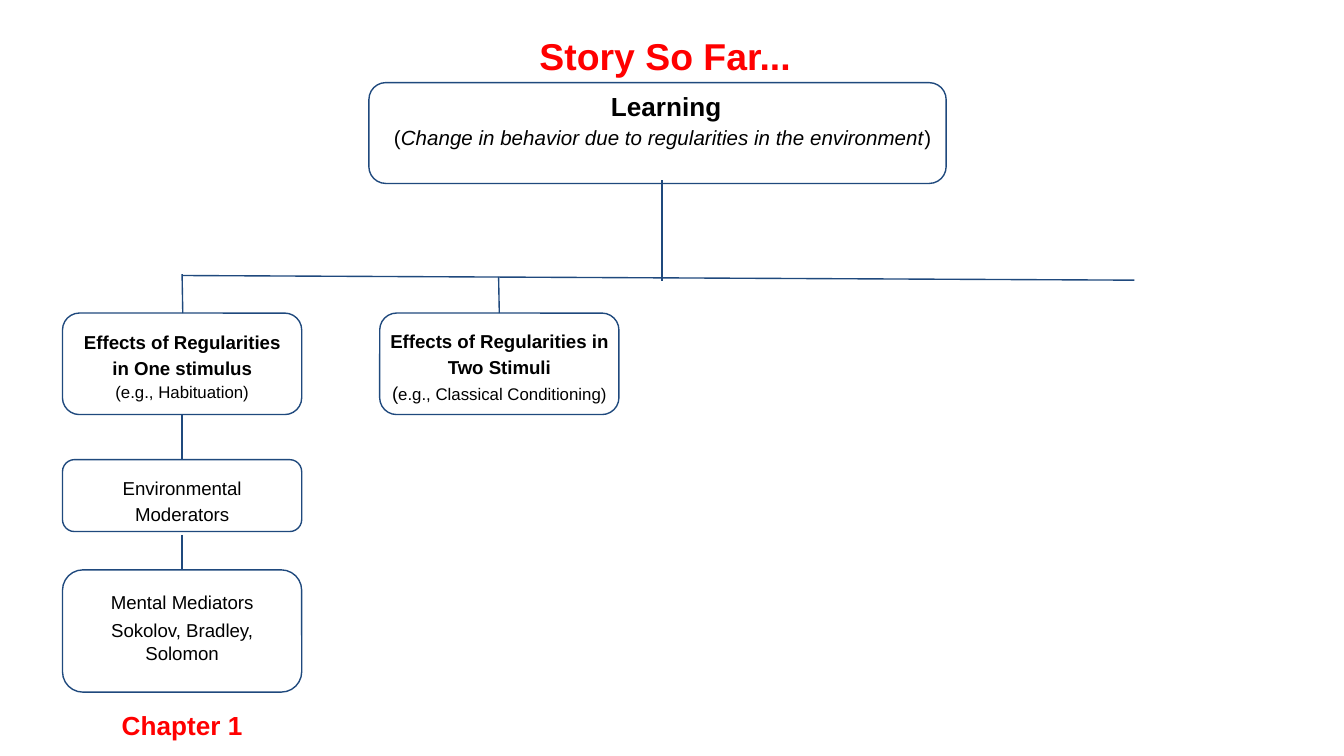
from pptx import Presentation
from pptx.dml.color import RGBColor
from pptx.enum.shapes import MSO_CONNECTOR, MSO_SHAPE
from pptx.enum.text import MSO_ANCHOR, PP_ALIGN
from pptx.oxml.ns import qn
from pptx.util import Emu, Pt
from lxml import etree

PX = 4572  # 200 px to the inch
STRAIGHT = MSO_CONNECTOR.STRAIGHT
ROUNDED = MSO_SHAPE.ROUNDED_RECTANGLE
TOP, MIDDLE = MSO_ANCHOR.TOP, MSO_ANCHOR.MIDDLE
CENTER = PP_ALIGN.CENTER

NAVY = RGBColor(0x1F, 0x49, 0x7D)
BLACK = RGBColor(0x00, 0x00, 0x00)
RED = RGBColor(0xFF, 0x00, 0x00)

FONT = "Arial"
LINE_WIDTH = Pt(0.75)
INSET = 20
COLUMN_LEFT, COLUMN_WIDTH = 93, 356
COLUMN_CENTER = COLUMN_LEFT + COLUMN_WIDTH // 2
EFFECTS_TOP, EFFECTS_HEIGHT = 466, 151


def px(*lengths):
    return [Emu(length * PX) for length in lengths]


def write_text(shape, paragraphs, color=BLACK, anchor=TOP, spacing=1.15, top_inset=INSET):
    """Fill a shape with paragraphs, each a list of (text, size, bold, italic) runs."""
    frame = shape.text_frame
    frame.word_wrap = True
    frame.vertical_anchor = anchor
    frame.margin_left, frame.margin_right, frame.margin_bottom = px(INSET, INSET, INSET)
    frame.margin_top = Emu(top_inset * PX)
    for index, runs in enumerate(paragraphs):
        paragraph = frame.add_paragraph() if index else frame.paragraphs[0]
        paragraph.alignment = CENTER
        paragraph.line_spacing = spacing
        for text, size, bold, italic in runs:
            run = paragraph.add_run()
            run.text = text
            run.font.name = FONT
            run.font.size = Pt(size)
            run.font.bold = bold
            run.font.italic = italic
            run.font.color.rgb = color


def add_label(slide, left, top, width, height, paragraphs, color=BLACK):
    box = slide.shapes.add_textbox(*px(left, top, width, height))
    write_text(box, paragraphs, color)


def add_frame(slide, left, top, width, height):
    frame = slide.shapes.add_shape(ROUNDED, *px(left, top, width, height))
    frame.shadow.inherit = False
    frame.fill.background()
    frame.line.color.rgb = NAVY
    frame.line.width = LINE_WIDTH
    return frame


def add_line(slide, *ends):
    line = slide.shapes.add_connector(STRAIGHT, *px(*ends))
    line.line.color.rgb = NAVY
    line.line.width = LINE_WIDTH
    etree.SubElement(line._element.spPr, qn("a:effectLst"))


def add_learning(slide):
    add_frame(slide, 549, 123, 859, 150)
    add_label(slide, 464, 107, 1044, 162, [
        [(" Learning", 14, True, False)],
        [("(", 11, False, False),
         ("Change in behavior due to regularities in the environment", 11, False, True),
         (")", 11, False, False)],
    ])
    add_label(slide, 666, 19, 648, 92, [[("Story So Far...", 20, True, False)]], RED)


def add_branches(slide):
    add_line(slide, 985, 268, 985, 418)
    add_line(slide, 272, 410, 1688, 417)
    add_line(slide, COLUMN_CENTER, 408, 272, EFFECTS_TOP)
    add_line(slide, 742, 412, 743, EFFECTS_TOP)


def add_one_stimulus_column(slide):
    add_frame(slide, COLUMN_LEFT, EFFECTS_TOP, COLUMN_WIDTH, EFFECTS_HEIGHT)
    add_label(slide, COLUMN_LEFT, 467, COLUMN_WIDTH, 150, [
        [("Effects of Regularities in One stimulus", 10, True, False)],
        [("(e.g., Habituation)", 9, False, False)],
    ])

    add_line(slide, COLUMN_CENTER, 618, COLUMN_CENTER, 684)
    add_frame(slide, COLUMN_LEFT, 684, COLUMN_WIDTH, 107)
    add_label(slide, COLUMN_LEFT, 685, COLUMN_WIDTH, 94,
              [[("Environmental Moderators", 10, False, False)]])

    add_line(slide, COLUMN_CENTER, 796, COLUMN_CENTER, 848)
    mediators = add_frame(slide, COLUMN_LEFT, 848, COLUMN_WIDTH, 182)
    write_text(mediators, [[("Sokolov, Bradley, Solomon", 10, False, False)]],
               anchor=MIDDLE, spacing=1.0, top_inset=52)
    add_label(slide, COLUMN_LEFT, 855, COLUMN_WIDTH, 168,
              [[("Mental Mediators", 10, False, False)]])
    add_label(slide, COLUMN_LEFT, 1029, COLUMN_WIDTH, 74,
              [[("Chapter 1", 14, True, False)]], RED)


def add_two_stimuli(slide):
    add_frame(slide, 565, EFFECTS_TOP, COLUMN_WIDTH, EFFECTS_HEIGHT)
    add_label(slide, 549, EFFECTS_TOP, 388, 150, [
        [("Effects of Regularities in Two Stimuli", 10, True, False)],
        [("(", 10, False, False), ("e.g., Classical Conditioning)", 9, False, False)],
    ])


def main():
    presentation = Presentation()
    presentation.slide_width, presentation.slide_height = px(2000, 1125)
    slide = presentation.slides.add_slide(presentation.slide_layouts[6])
    add_branches(slide)
    add_one_stimulus_column(slide)
    add_two_stimuli(slide)
    add_learning(slide)
    presentation.save("out.pptx")


if __name__ == "__main__":
    main()
